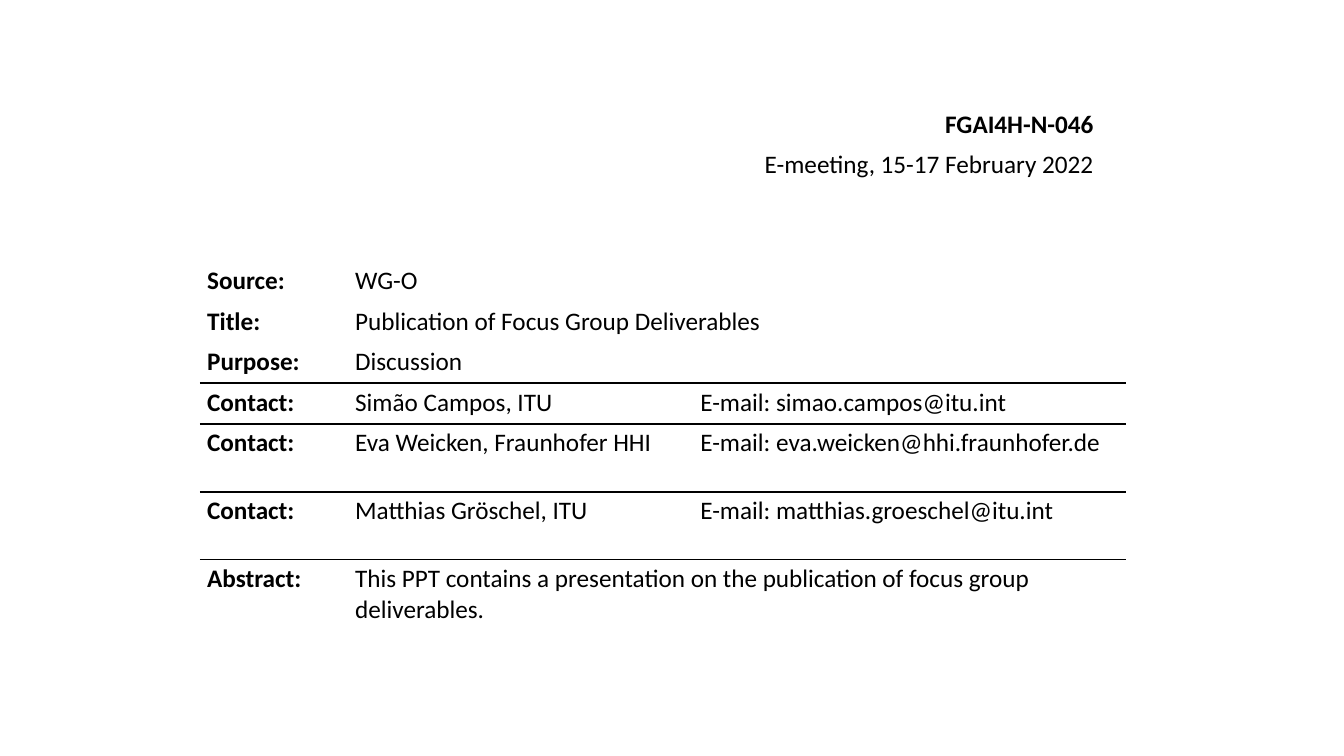
from lxml import etree
from pptx import Presentation
from pptx.dml.color import RGBColor
from pptx.enum import text
from pptx.oxml import ns
from pptx.util import Cm, Pt

BLACK = RGBColor(0x00, 0x00, 0x00)
RIGHT_EDGE = 27.81
LINE_HEIGHT = 1.02
TALL_ROW = 1.71

COLUMN_WIDTHS = (3.73, 8.7, 10.9)
DETAILS = (
    ("Source:", "WG-O"),
    ("Title:", "Publication of Focus Group Deliverables"),
    ("Purpose:", "Discussion"),
    ("Contact:", "Simão Campos, ITU", "E-mail: simao.campos@itu.int"),
    ("Contact:", "Eva Weicken, Fraunhofer HHI", "E-mail: eva.weicken@hhi.fraunhofer.de"),
    ("Contact:", "Matthias Gröschel, ITU", "E-mail: matthias.groeschel@itu.int"),
    ("Abstract:", "This PPT contains a presentation on the publication of focus group deliverables."),
)
ROW_HEIGHTS = (LINE_HEIGHT,) * 4 + (TALL_ROW,) * 3
FIRST_CONTACT, ABSTRACT = 3, 6


class CoverSlide:
    font_name = "Calibri"
    font_size = Pt(18)
    rule_width = Pt(1.5)

    def __init__(self, deck):
        self.slide = deck.slides.add_slide(deck.slide_layouts[6])

    def set_wording(self, frame, wording, bold=False):
        frame.text = wording
        for run in frame.paragraphs[0].runs:
            run.font.name = self.font_name
            run.font.size = self.font_size
            run.font.bold = bold
            run.font.color.rgb = BLACK

    def heading(self, wording, top, width, bold=False):
        """Add a line of text that ends at the right edge."""
        box = self.slide.shapes.add_textbox(
            Cm(RIGHT_EDGE - width), Cm(top), Cm(width), Cm(LINE_HEIGHT))
        frame = box.text_frame
        self.set_wording(frame, wording, bold)
        frame.word_wrap = False
        frame.auto_size = text.MSO_AUTO_SIZE.SHAPE_TO_FIT_TEXT
        frame.paragraphs[0].alignment = text.PP_ALIGN.RIGHT

    def set_borders(self, cell, ruled_sides):
        properties = cell._tc.get_or_add_tcPr()
        for position, side in enumerate("LRTB"):
            line = etree.Element(ns.qn(f"a:ln{side}"))
            if side in ruled_sides:
                line.set("w", str(self.rule_width))
                fill = etree.SubElement(line, ns.qn("a:solidFill"))
                etree.SubElement(fill, ns.qn("a:srgbClr"), val=str(BLACK))
            else:
                etree.SubElement(line, ns.qn("a:noFill"))
            properties.insert(position, line)

    def details_table(self, left, top):
        table = self.slide.shapes.add_table(
            len(DETAILS), len(COLUMN_WIDTHS), Cm(left), Cm(top),
            Cm(sum(COLUMN_WIDTHS)), Cm(sum(ROW_HEIGHTS))).table
        table.first_row = table.horz_banding = False
        for column, width in zip(table.columns, COLUMN_WIDTHS):
            column.width = Cm(width)
        for index, (row, height, wordings) in enumerate(zip(table.rows, ROW_HEIGHTS, DETAILS)):
            row.height = Cm(height)
            ruled_sides = ("T" if FIRST_CONTACT <= index <= ABSTRACT else "") + (
                "B" if FIRST_CONTACT - 1 <= index < ABSTRACT else "")
            for cell in row.cells:
                cell.fill.background()
                cell.margin_left = cell.margin_right = Cm(0.18)
                cell.margin_top = cell.margin_bottom = Cm(0.1)
                self.set_borders(cell, ruled_sides)
            if len(wordings) == 2:
                table.cell(index, 1).merge(table.cell(index, 2))
            for position, wording in enumerate(wordings):
                self.set_wording(table.cell(index, position).text_frame, wording, bold=position == 0)


def main():
    deck = Presentation()
    deck.slide_width, deck.slide_height = Cm(33.87), Cm(19.05)
    cover = CoverSlide(deck)
    cover.heading("FGAI4H-N-046", 2.6, 4.29, bold=True)
    cover.heading("E-meeting, 15-17 February 2022", 3.62, 8.92)
    cover.details_table(5.04, 6.6)
    deck.save("out.pptx")


if __name__ == "__main__":
    main()
